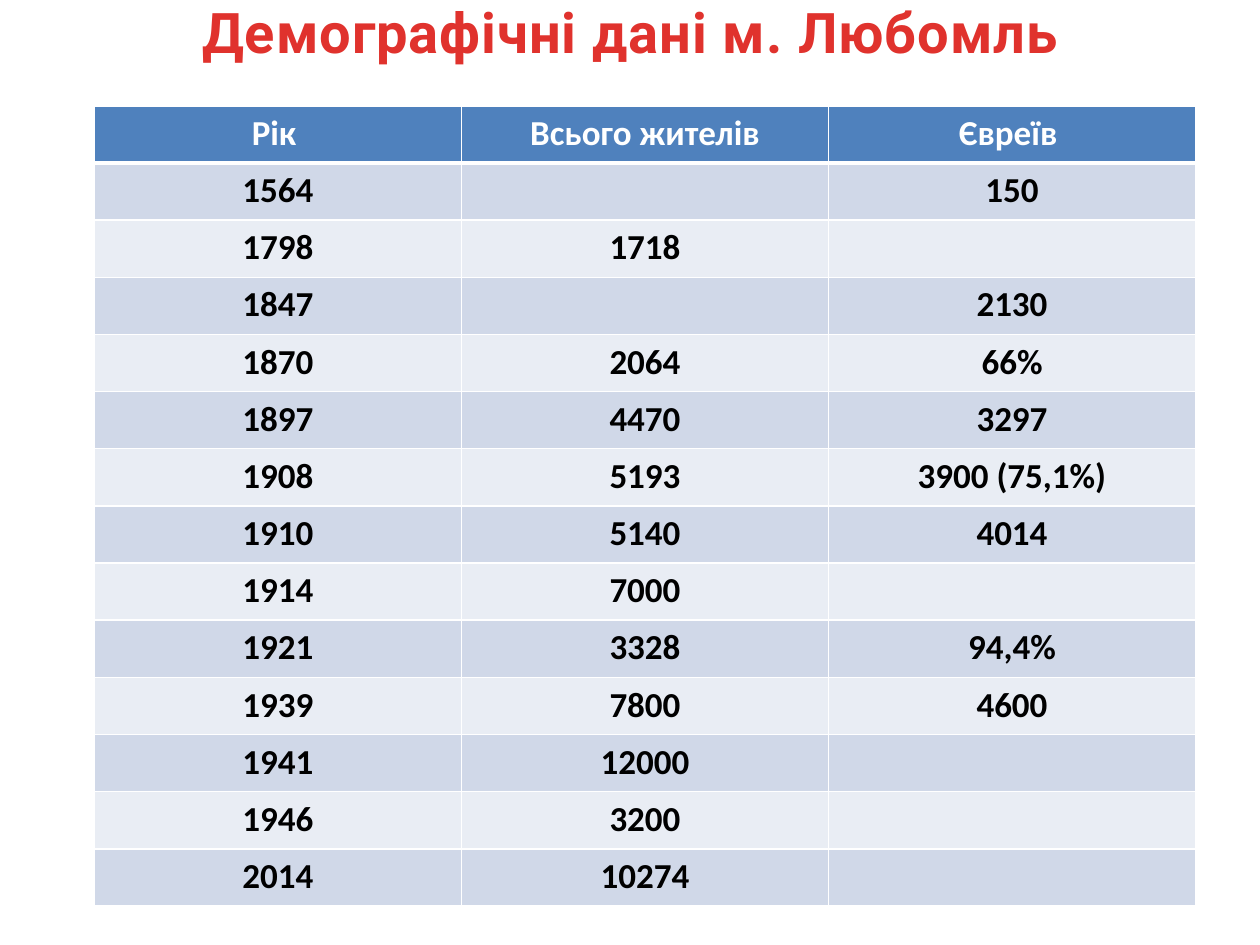
import pptx
import pptx.dml.color
import pptx.enum.text
import pptx.oxml
import pptx.oxml.ns
import pptx.util
from pptx.util import Inches

COLORS = {
    "title_light": "E0322D",
    "title_dark": "A2201C",
    "header": "4F81BD",
    "odd": "D0D8E8",
    "even": "E9EDF4",
    "white": "FFFFFF",
    "black": "000000",
}

ROWS = [
    ("Рік ", "Всього жителів", "Євреїв "),
    ("1564", "", "150"),
    ("1798", "1718", ""),
    ("1847", "", "2130"),
    ("1870", "2064", "66%"),
    ("1897", "4470", "3297"),
    ("1908", "5193", "3900 (75,1%)"),
    ("1910", "5140", "4014"),
    ("1914", "7000", ""),
    ("1921", "3328", "94,4%"),
    ("1939", "7800", "4600"),
    ("1941", "12000", ""),
    ("1946", "3200", ""),
    ("2014", "10274", ""),
]


def rgb(name):
    return pptx.dml.color.RGBColor.from_string(COLORS[name])


class SlideBuilder:
    title_font = "Roboto"
    table_font = "Calibri"

    def __init__(self, s):
        self.s = s

    def format_text(self, tf, font_name, size):
        p = tf.paragraphs[0]
        p.alignment = pptx.enum.text.PP_ALIGN.CENTER
        for r in p.runs:
            r.font.name = font_name
            r.font.size = pptx.util.Pt(size)
            r.font.bold = True
        return p.runs

    def title(self, text, left, top, width, height):
        sp = self.s.shapes.add_textbox(
            Inches(left), Inches(top), Inches(width), Inches(height))
        tf = sp.text_frame
        tf.word_wrap = True
        tf.vertical_anchor = pptx.enum.text.MSO_ANCHOR.MIDDLE
        tf.text = text
        for r in self.format_text(tf, self.title_font, 32):
            fill = r.font.fill
            fill.gradient()
            fill.gradient_angle = 270
            stops = [(0.25, "title_light"), (1, "title_dark")]
            for stop, (position, color) in zip(fill.gradient_stops, stops):
                stop.position = position
                stop.color.rgb = rgb(color)
            r.font._element.set("spc", "50")

    def borders(self, cell, top, bottom):
        tc_pr = cell._tc.get_or_add_tcPr()
        for side, points in zip("LRTB", (1, 1, top, bottom)):
            tc_pr.append(pptx.oxml.parse_xml(
                f'<a:ln{side} {pptx.oxml.ns.nsdecls("a")} w="{pptx.util.Pt(points)}">'
                f'<a:solidFill><a:srgbClr val="{COLORS["white"]}"/></a:solidFill>'
                f'</a:ln{side}>'))

    def cell(self, cell, text, row):
        self.borders(cell, 3 if row == 1 else 1, 3 if row == 0 else 1)
        cell.fill.solid()
        band = "header" if row == 0 else "odd" if row % 2 else "even"
        cell.fill.fore_color.rgb = rgb(band)
        cell.text_frame.text = text
        for r in self.format_text(cell.text_frame, self.table_font, 20):
            r.font.color.rgb = rgb("black" if row else "white")

    def table(self, rows, left, top, width, height):
        table = self.s.shapes.add_table(
            len(rows), len(rows[0]),
            Inches(left), Inches(top), Inches(width), Inches(height)).table
        for i, values in enumerate(rows):
            for j, text in enumerate(values):
                self.cell(table.cell(i, j), text, i)


def main():
    prs = pptx.Presentation()
    prs.slide_width = Inches(10)
    prs.slide_height = Inches(7.5)
    builder = SlideBuilder(prs.slides.add_slide(prs.slide_layouts[6]))
    builder.title("Демографічні дані м. Любомль", 0.28, -0.07, 9.45, 0.64)
    builder.table(ROWS, 0.75, 0.84, 8.74, 6.35)
    prs.save("out.pptx")


if __name__ == "__main__":
    main()
